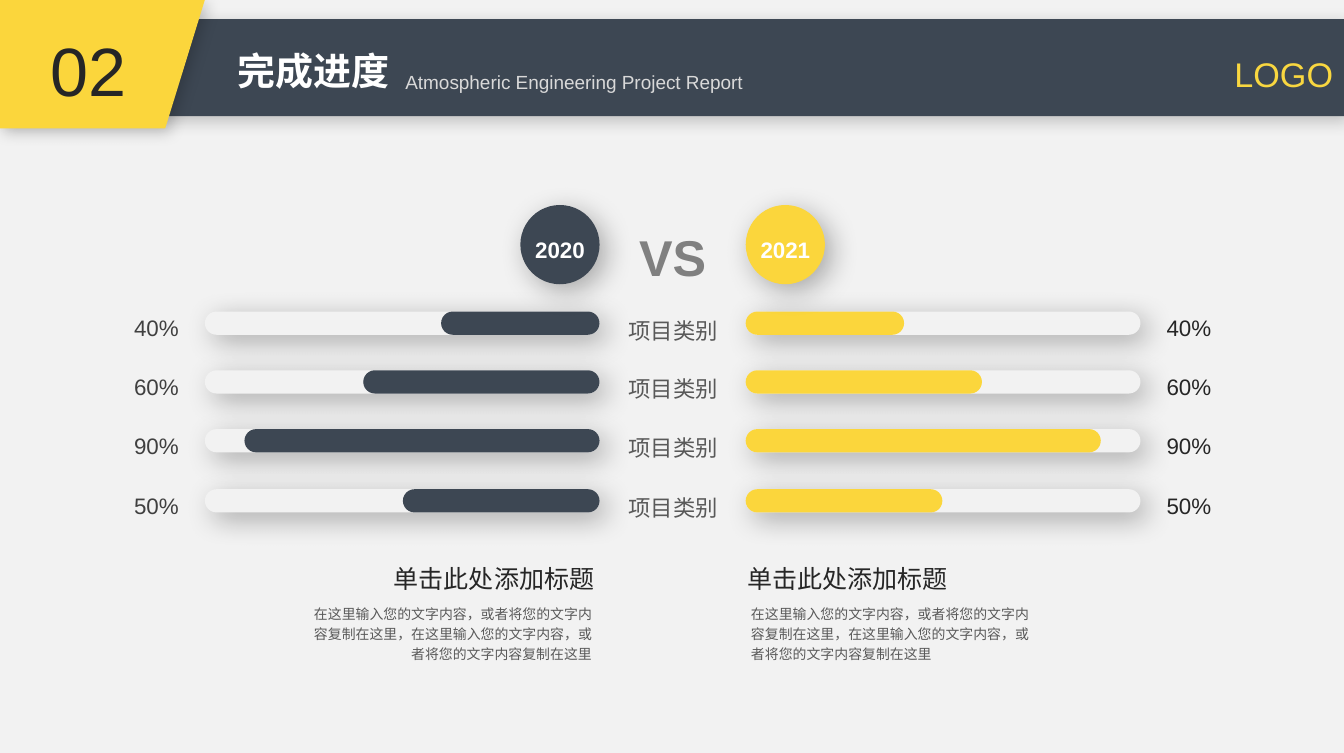
from lxml import etree
from pptx import Presentation
from pptx.dml.color import RGBColor
from pptx.enum.shapes import MSO_SHAPE as Shape
from pptx.enum.text import MSO_ANCHOR as Anchor, MSO_AUTO_SIZE as AutoSize, PP_ALIGN as Align
from pptx.oxml.ns import qn
from pptx.util import Pt

PX = 9144  # 100 px to the inch
SLATE = RGBColor(0x3D, 0x47, 0x53)
YELLOW = RGBColor(0xFB, 0xD6, 0x3C)
LOGO_YELLOW = RGBColor(0xF9, 0xD7, 0x40)
PALE = RGBColor(0xF2, 0xF2, 0xF2)
WHITE = RGBColor(0xFF, 0xFF, 0xFF)
SILVER = RGBColor(0xD9, 0xD9, 0xD9)
GREY = RGBColor(0x80, 0x80, 0x80)
DIM = RGBColor(0x59, 0x59, 0x59)
DARK = RGBColor(0x40, 0x40, 0x40)
INK = RGBColor(0x26, 0x26, 0x26)

# Shadow opacity in percent, blur and distance in points
HEADER_SHADOW = (20, 8, 3)
SOFT_SHADOW = (30, 15, 5)

deck = Presentation()
deck.slide_width, deck.slide_height = 984 * PX, 551 * PX
page = deck.slides.add_slide(deck.slide_layouts[5])
page.background.fill.solid()
page.background.fill.fore_color.rgb = PALE


def paint(shape, color, shadow=None):
    """Fill a shape without outline, with an optional shadow to the lower right."""
    shape.fill.solid()
    shape.fill.fore_color.rgb = color
    shape.line.fill.background()
    shape.shadow.inherit = False
    if shadow:
        opacity, blur, distance = shadow
        effects = shape.element.spPr.find(qn("a:effectLst"))
        outer = etree.SubElement(
            effects, qn("a:outerShdw"), blurRad=str(Pt(blur)), dist=str(Pt(distance)),
            dir="2700000", algn="tl", rotWithShape="0")
        tint = etree.SubElement(outer, qn("a:srgbClr"), val="000000")
        etree.SubElement(tint, qn("a:alpha"), val=str(opacity * 1000))


def write(place, text, size, color, align=Align.LEFT, bold=False, spacing=1.2,
          inset=True, wrap=False, anchor=Anchor.TOP, box=None):
    """Set one paragraph in the given box, or in a new text box."""
    left, top, width, height = (value * PX for value in place)
    box = box or page.shapes.add_textbox(left, top, width, height)
    box.left, box.top, box.width, box.height = left, top, width, height
    frame = box.text_frame
    frame.text = text
    frame.word_wrap = wrap
    frame.vertical_anchor = anchor
    frame.auto_size = AutoSize.NONE if anchor == Anchor.MIDDLE else AutoSize.SHAPE_TO_FIT_TEXT
    if not inset:
        frame.margin_left = frame.margin_right = frame.margin_top = frame.margin_bottom = 0
    para = frame.paragraphs[0]
    para.alignment = align
    para.line_spacing = spacing
    para.font.name = "Arial"
    para.font.size = Pt(size)
    para.font.bold = bold
    para.font.color.rgb = color


# Header
band = page.shapes.add_shape(Shape.RECTANGLE, 0, 14 * PX, 984 * PX, 71 * PX)
paint(band, SLATE, HEADER_SHADOW)
outline = page.shapes.build_freeform(0, 0, scale=PX)
outline.add_line_segments([(150, 0), (121, 94), (0, 94)])
paint(outline.convert_to_shape(), YELLOW, HEADER_SHADOW)

title = page.shapes.title
title.element.getparent().append(title.element)  # bring in front of the band
write((164, 30, 132, 44), "完成进度", 20, WHITE, bold=True, spacing=1.0, box=title)
write((287, 47, 276, 28), "Atmospheric Engineering Project Report", 10, SILVER,
      spacing=1.0, wrap=True)
write((27, 16, 76, 71), "02", 36, INK, Align.CENTER, spacing=1.0)
write((894, 34, 93, 40), "LOGO", 18, LOGO_YELLOW, spacing=1.0)

# Progress rows
TRACK_WIDTH, BAR_HEIGHT = 289, 17
LEFT_TRACK, RIGHT_TRACK = 150, 546
for row, percent in enumerate((40, 60, 90, 50)):
    top = 228 + row * 130 // 3
    done = round(TRACK_WIDTH * percent / 100)
    bars = (
        (LEFT_TRACK, TRACK_WIDTH, PALE, SOFT_SHADOW),
        (LEFT_TRACK + TRACK_WIDTH - done, done, SLATE, None),
        (RIGHT_TRACK, TRACK_WIDTH, PALE, SOFT_SHADOW),
        (RIGHT_TRACK, done, YELLOW, None),
    )
    for left, width, color, shadow in bars:
        bar = page.shapes.add_shape(
            Shape.ROUNDED_RECTANGLE, left * PX, top * PX, width * PX, BAR_HEIGHT * PX)
        bar.adjustments[0] = 0.5
        paint(bar, color, shadow)
    write((450, top - 5, 86, 32), "项目类别", 11.8, DIM, Align.CENTER)
    for left, color in ((76, DARK), (832, INK)):
        write((left, top - 4, 77, 28), f"{percent}%", 11.8, color, Align.CENTER,
              inset=False, wrap=True, anchor=Anchor.MIDDLE)

# Years and captions
CAPTION = "在这里输入您的文字内容，或者将您的文字内容复制在这里，" * 2
write((460, 157, 65, 49), "VS", 26.5, GREY, Align.CENTER, bold=True, inset=False)
sides = (
    ("2020", SLATE, 381, 286, 212, Align.RIGHT),
    ("2021", YELLOW, 546, 547, 540, Align.LEFT),
)
for year, color, disc_left, heading_left, caption_left, align in sides:
    disc = page.shapes.add_shape(Shape.OVAL, disc_left * PX, 150 * PX, 58 * PX, 58 * PX)
    paint(disc, color, SOFT_SHADOW)
    write((disc_left + 4, 169, 50, 22), year, 11.8, WHITE, Align.CENTER, bold=True, inset=False)
    write((heading_left, 408, 149, 24), "单击此处添加标题", 13.2, INK, align, inset=False)
    write((caption_left, 436, 231, 55), CAPTION.rstrip("，"), 7.3, DIM, align, wrap=True)

deck.save("out.pptx")
